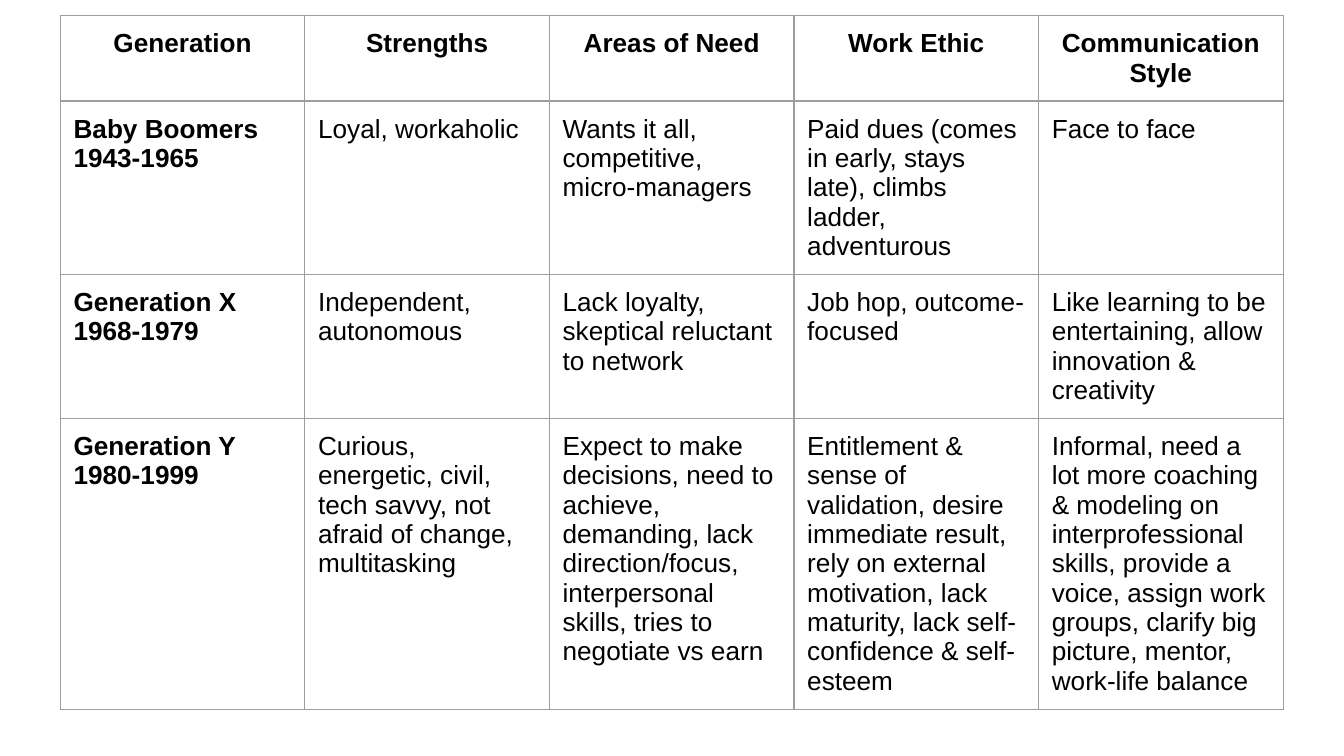
import pptx
import pptx.dml.color
import pptx.enum.text
import pptx.oxml
import pptx.oxml.ns
import pptx.util
from pptx.util import Cm

BLACK = pptx.dml.color.RGBColor(0x00, 0x00, 0x00)
GRID_GREY = pptx.dml.color.RGBColor(0x9E, 0x9E, 0x9E)
GRID_WIDTH = pptx.util.Pt(0.75)
CELL_MARGIN = Cm(0.25)
ROW_HEIGHT = Cm(1.08)

HEADINGS = ["Generation", "Strengths", "Areas of Need", "Work Ethic",
            "Communication Style"]
GENERATIONS = [
    ["Baby Boomers\n1943-1965",
     "Loyal, workaholic",
     "Wants it all, competitive, micro-managers",
     "Paid dues (comes in early, stays late), climbs ladder, adventurous",
     "Face to face"],
    ["Generation X\n1968-1979",
     "Independent, autonomous",
     "Lack loyalty, skeptical reluctant to network",
     "Job hop, outcome-focused",
     "Like learning to be entertaining, allow innovation & creativity"],
    ["Generation Y\n1980-1999",
     "Curious, energetic, civil, tech savvy, not afraid of change, "
     "multitasking",
     "Expect to make decisions, need to achieve, demanding, lack "
     "direction/focus, interpersonal skills, tries to negotiate vs earn",
     "Entitlement & sense of validation, desire immediate result, rely on "
     "external motivation, lack maturity, lack self-confidence & self-esteem",
     "Informal, need a lot more coaching & modeling on interprofessional "
     "skills, provide a voice, assign work groups, clarify big picture, "
     "mentor, work-life balance"],
]


def outline_cell(cell):
    properties = cell._tc.get_or_add_tcPr()
    for position, side in enumerate(("lnL", "lnR", "lnT", "lnB")):
        line = pptx.oxml.parse_xml(
            f'<a:{side} {pptx.oxml.ns.nsdecls("a")} w="{GRID_WIDTH}">'
            f'<a:solidFill><a:srgbClr val="{GRID_GREY}"/></a:solidFill>'
            f'<a:prstDash val="solid"/></a:{side}>')
        properties.insert(position, line)


def write_cell(cell, text, bold, align):
    frame = cell.text_frame
    for index, line in enumerate(text.split("\n")):
        para = frame.add_paragraph() if index else frame.paragraphs[0]
        para.alignment = align
        span = para.add_run()
        span.text = line
        span.font.name = "Arial"
        span.font.size = pptx.util.Pt(14)
        span.font.bold = bold
        span.font.color.rgb = BLACK


def add_generation_table(page, left, top, width):
    rows = [HEADINGS] + GENERATIONS
    box = page.shapes.add_table(len(rows), len(HEADINGS), left, top, width,
                                ROW_HEIGHT * len(rows))
    table = box.table
    table.horz_banding = False
    for row_index, texts in enumerate(rows):
        is_heading = row_index == 0
        align = (pptx.enum.text.PP_ALIGN.CENTER if is_heading
                 else pptx.enum.text.PP_ALIGN.LEFT)
        for column_index, text in enumerate(texts):
            cell = table.cell(row_index, column_index)
            cell.margin_left = cell.margin_right = CELL_MARGIN
            cell.margin_top = cell.margin_bottom = CELL_MARGIN
            cell.fill.background()
            outline_cell(cell)
            write_cell(cell, text, is_heading or column_index == 0, align)


def main():
    deck = pptx.Presentation()
    deck.slide_width, deck.slide_height = Cm(25.4), Cm(14.29)
    blank_layout = deck.slide_layouts[6]
    page = deck.slides.add_slide(blank_layout)
    add_generation_table(page, Cm(1.14), Cm(0.3), Cm(23.11))
    deck.save("out.pptx")


if __name__ == "__main__":
    main()
